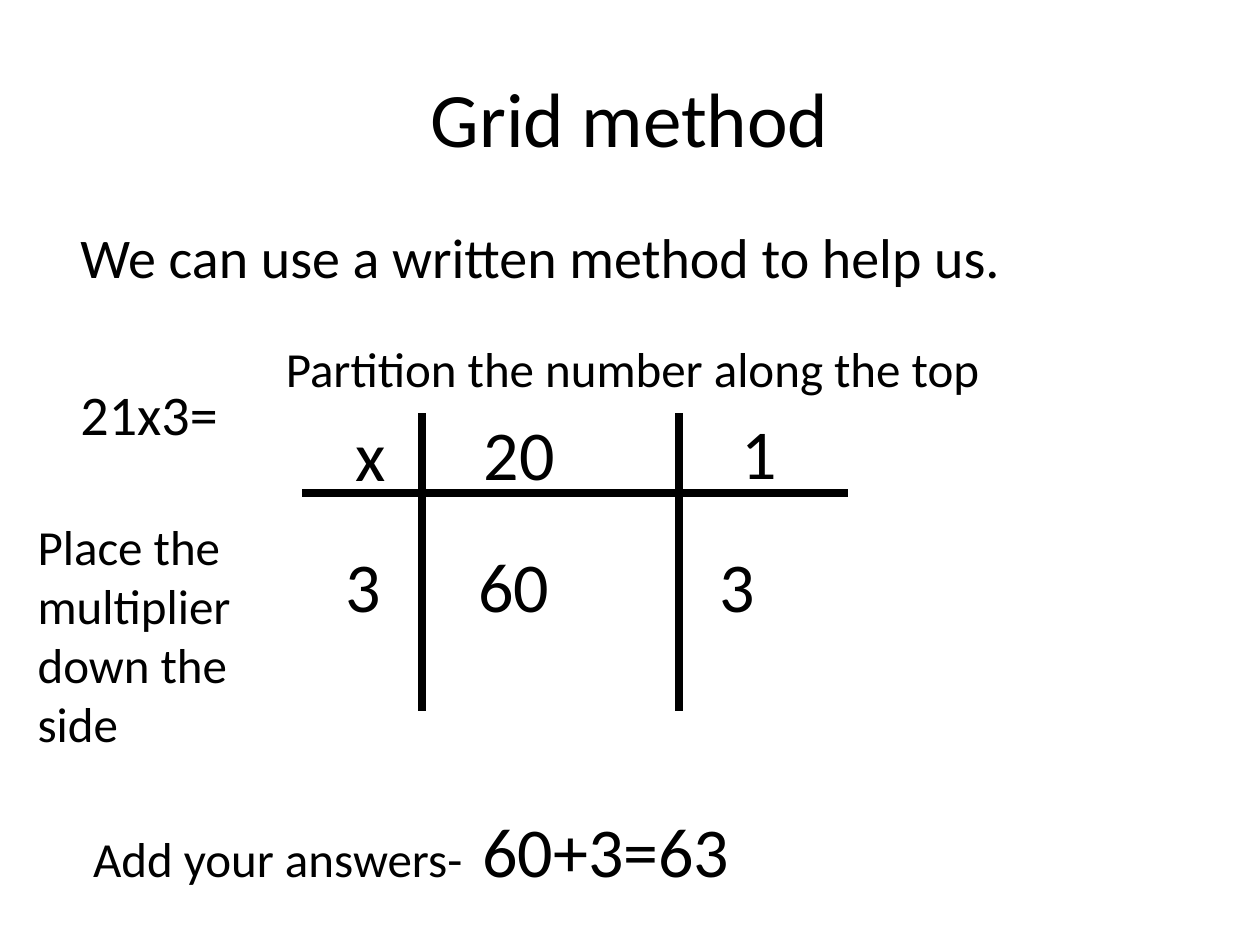
from dataclasses import dataclass

from lxml import etree
from pptx import Presentation
from pptx.dml.color import RGBColor
from pptx.enum import shapes, text
from pptx.oxml import ns
from pptx import util as u

BLACK = RGBColor(0, 0, 0)
WHITE = RGBColor(255, 255, 255)
FONT = "Calibri"
WIDE, HIGH = u.Inches(10), u.Inches(7.5)
COLS, ROWS = 100, 75
LARGE, SMALL = 40, 28


@dataclass(frozen=True)
class Label:
    words: str
    col: float
    row: float
    wide: float
    high: float
    size: float


@dataclass(frozen=True)
class Rule:
    col: float
    row: float
    right: float
    low: float


TITLE = Label("Grid method", 5, 3, 90, 12.5, 44)
BODY = Label("We can use a written method to help us.\n21x3=", 5.4, 17.2, 90, 49.5, 32)
TIMES = Label("x", 27.2, 32.2, 6.3, 7.7, LARGE)
SUM = Label("Add your answers-\t60+3=63", 6.4, 63.6, 57.5, 7.7, SMALL)
LABELS = [
    Label("20", 37.4, 32.1, 13, 7.7, LARGE),
    Label("1", 57.9, 32, 6.3, 7.7, LARGE),
    Label("3", 26.4, 42.6, 6.3, 7.7, LARGE),
    Label("Partition the number along the top", 21.7, 26.4, 57.5, 5.7, SMALL),
    Label("Place the multiplier down the side", 2, 40.5, 18.1, 19.9, SMALL),
    Label("60", 37, 42.6, 8.6, 7.7, LARGE),
    Label("3", 56.1, 42.6, 8.6, 7.7, LARGE),
]
RULES = [Rule(24, 39.1, 67.3, 39.1)] + [
    Rule(col, 32.8, col, 56.4) for col in (53.9, 33.5)
]


def across(cols: float) -> int:
    return round(WIDE * cols / COLS)


def down(rows: float) -> int:
    return round(HIGH * rows / ROWS)


def style(run, size: float) -> None:
    run.font.name = FONT
    run.font.size = u.Pt(size)
    run.font.color.rgb = BLACK


def write(tree, label: Label):
    box = tree.add_textbox(
        across(label.col), down(label.row), across(label.wide), down(label.high)
    )
    frame = box.text_frame
    frame.word_wrap = True
    frame.text = label.words
    for para in frame.paragraphs:
        for run in para.runs:
            style(run, label.size)
    return frame


def draw(tree, rule: Rule) -> None:
    line = tree.add_connector(
        shapes.MSO_CONNECTOR.STRAIGHT,
        across(rule.col), down(rule.row), across(rule.right), down(rule.low),
    )
    line.line.color.rgb = BLACK
    line.line.width = u.Pt(4.5)
    etree.SubElement(line._element.spPr, ns.qn("a:effectLst"))


def total(tree) -> None:
    para = write(tree, SUM).paragraphs[0]
    lead, answer = SUM.words.split("\t")
    para.runs[0].text = lead + "\t"
    run = para.add_run()
    run.text = answer
    style(run, LARGE)
    tabs = etree.SubElement(para._p.get_or_add_pPr(), ns.qn("a:tabLst"))
    etree.SubElement(tabs, ns.qn("a:tab"), pos=str(across(30.9)), algn="l")


def main() -> None:
    deck = Presentation()
    deck.slide_width, deck.slide_height = WIDE, HIGH
    slide = deck.slides.add_slide(deck.slide_layouts[6])
    slide.background.fill.solid()
    slide.background.fill.fore_color.rgb = WHITE
    tree = slide.shapes

    head = write(tree, TITLE)
    head.vertical_anchor = text.MSO_ANCHOR.MIDDLE
    head.paragraphs[0].alignment = text.PP_ALIGN.CENTER
    body = write(tree, BODY)
    body.paragraphs[1].space_before = u.Pt(51)

    grid = tree.add_group_shape().shapes
    for rule in RULES:
        draw(grid, rule)
    write(grid, TIMES)
    for label in LABELS:
        write(tree, label)
    total(tree)
    deck.save("out.pptx")


if __name__ == "__main__":
    main()
